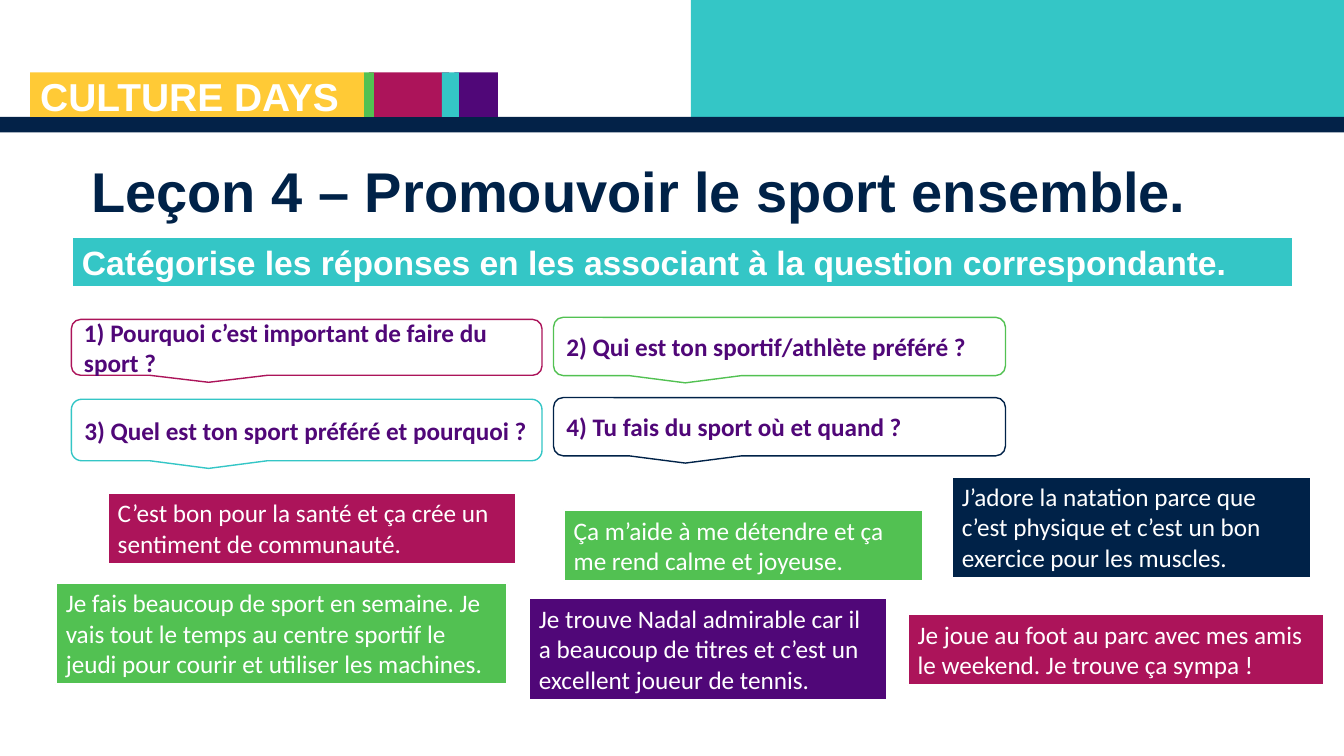
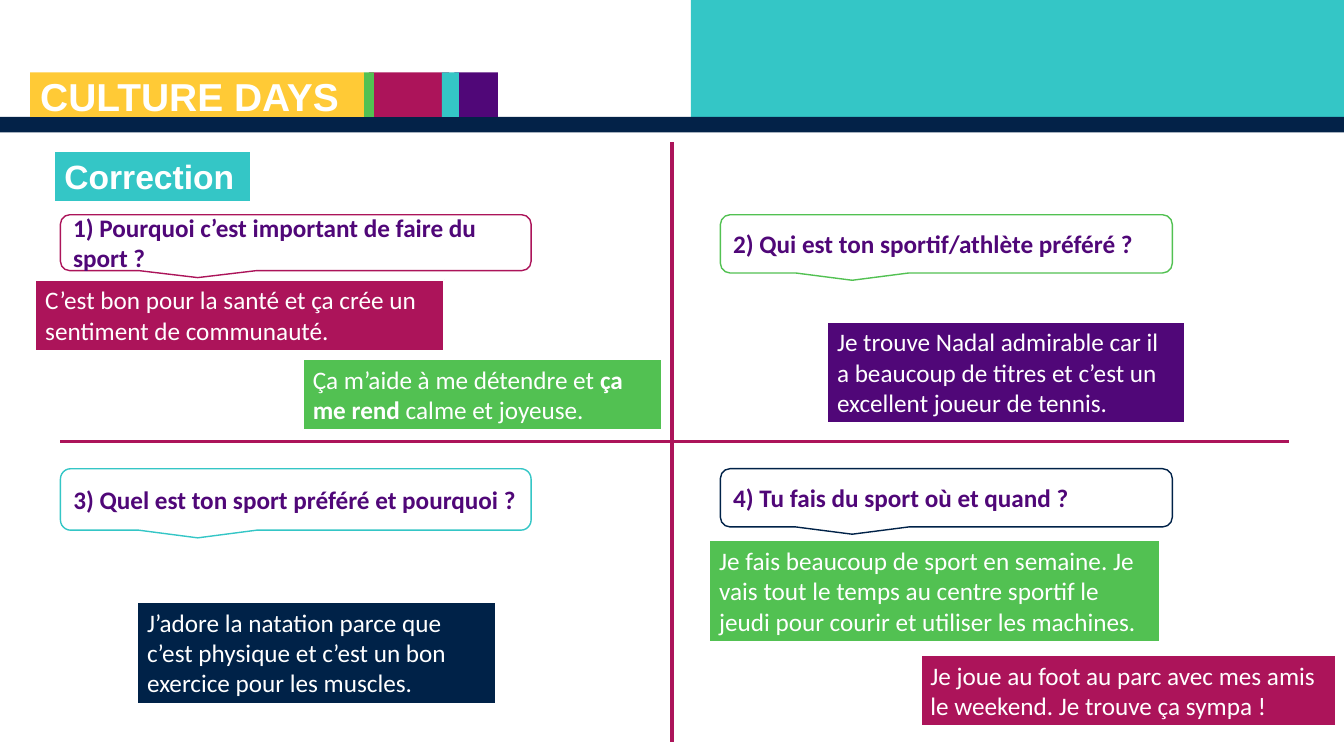
from pptx import Presentation
from pptx.dml.color import RGBColor
from pptx.enum.shapes import MSO_CONNECTOR as Wire, MSO_SHAPE as Form
from pptx.enum.text import MSO_ANCHOR as Anchor, MSO_AUTO_SIZE as Fit, PP_ALIGN as Align
from pptx.oxml import parse_xml
from pptx.oxml.ns import nsdecls
from pptx.util import Pt

WHITE, NAVY, BAND = "FFFFFF", "002248", "032248"
TEAL, PINK, GREEN = "34C6C6", "AC145A", "52C152"
PURPLE, YELLOW = "500778", "FFCA36"

BARS = [
    (493.6, 0, 466.4, 83.7, TEAL),
    (0, 83.6, 960, 11, BAND),
    (324.6, 51.8, 31.1, 31.8, PURPLE),
    (263.6, 51.8, 57.2, 31.8, PINK),
    (315.6, 51.8, 12.3, 31.8, TEAL),
    (260, 51.8, 7, 31.8, GREEN),
    (21.6, 51.8, 238.4, 31.8, YELLOW),
]
BRAND = "CULTURE DAYS"
TITLE = "Leçon 4 – Promouvoir le sport ensemble."
TASK = "Catégorise les réponses en les associant à la question correspondante."

ASKS = [
    ("1) Pourquoi c’est important de faire du sport ?", 336.2, 39.9, PINK),
    ("2) Qui est ton sportif/athlète préféré ?", 322.8, 41.6, GREEN),
    ("3) Quel est ton sport préféré et pourquoi ?", 336.2, 43.9, TEAL),
    ("4) Tu fais du sport où et quand ?", 322.8, 41.6, NAVY),
]
REPLIES = [
    (["C’est bon pour la santé et ça crée un sentiment de communauté."], 292, 50.9, PINK),
    (["J’adore la natation parce que c’est physique et c’est un bon exercice pour les muscles."],
     256.4, 72.7, NAVY),
    (["Je fais beaucoup de sport en semaine. Je vais tout le temps au centre sportif "
      "le jeudi pour courir et utiliser les machines."], 322.4, 72.7, GREEN),
    (["Je trouve Nadal admirable car il a beaucoup de titres et c’est un excellent "
      "joueur de tennis."], 255.6, 72.7, PURPLE),
    (["Je joue au foot au parc avec mes amis le weekend. Je trouve ça sympa !"],
     297.2, 50.9, PINK),
    (["Ça m’aide à me détendre et ", "ça me rend ", "calme et joyeuse."], 256.4, 50.9, GREEN),
]

SORT_ASKS = [(51, 228.2), (395.4, 226.7), (51, 285.2), (395.4, 284)]
SORT_REPLIES = [(77, 352), (680, 340.4), (39.9, 416.2), (377.9, 427.4), (648.3, 438.5), (402.7, 364.3)]
KEY_ASKS = [(x, y) for y in (153.4, 334.8) for x in (43.2, 514.6)]
KEY_REPLIES = [(25.2, 199.8), (98, 430), (506.6, 386), (590.8, 229.8), (657.5, 468), (216.3, 256.4)]
CROSS = [(480, 101.5, 480, 530), (43.2, 315.4, 921, 315.4)]


def tint(code):
    return RGBColor.from_string(code)


def block(page, box, fill, edge=None, weight=1.5, form=Form.RECTANGLE):
    shape = page.shapes.add_shape(form, *map(Pt, box))
    shape.shadow.inherit = False
    shape.fill.solid()
    shape.fill.fore_color.rgb = tint(fill)
    if edge:
        shape.line.color.rgb = tint(edge)
        shape.line.width = Pt(weight)
    else:
        shape.line.fill.background()
    return shape


def write(shape, parts, size, color, face="Calibri", bold=False, anchor=Anchor.TOP, stress=False):
    frame = shape.text_frame
    frame.word_wrap = True
    frame.vertical_anchor = anchor
    para = frame.paragraphs[0]
    para.alignment = Align.LEFT
    for i, part in enumerate(parts):
        run = para.add_run()
        run.text = part
        if stress and i % 2:
            run.font.bold = True
    font = para.font
    font.name, font.size, font.bold = face, Pt(size), bold
    font.color.rgb = tint(color)
    return frame


def head(page, text, box, size, color):
    shape = page.shapes.add_textbox(*map(Pt, box))
    return write(shape, [text], size, color, "Arial", True)


def label(page, text, box):
    shape = block(page, box, TEAL, WHITE)
    write(shape, [text], 24, WHITE, "Arial", True).auto_size = Fit.SHAPE_TO_FIT_TEXT


def start(deck):
    page = deck.slides.add_slide(deck.slide_layouts[6])
    for *box, fill in BARS:
        block(page, box, fill)
    frame = head(page, BRAND, (21.6, 54, 298.8, 34.6), 27.8, WHITE)
    frame.vertical_anchor = Anchor.BOTTOM
    frame.paragraphs[0].line_spacing = 0.8
    return page


def cards(page, asks, replies, stress=False):
    for (text, w, h, edge), spot in zip(ASKS, asks):
        shape = block(page, (*spot, w, h), WHITE, edge, 1, Form.ROUNDED_RECTANGULAR_CALLOUT)
        write(shape, [text], 18, PURPLE, bold=True, anchor=Anchor.MIDDLE)
    for (parts, w, h, fill), spot in zip(REPLIES, replies):
        shape = block(page, (*spot, w, h), fill, WHITE)
        frame = write(shape, parts, 18, WHITE, stress=stress)
        frame.auto_size = Fit.SHAPE_TO_FIT_TEXT


def rule(page, ends):
    line = page.shapes.add_connector(Wire.STRAIGHT, *map(Pt, ends))
    line.line.color.rgb = tint(PINK)
    line.line.width = Pt(2.25)
    line._element.spPr.append(parse_xml(f"<a:effectLst {nsdecls('a')}/>"))


def main():
    deck = Presentation()
    deck.slide_width, deck.slide_height = Pt(960), Pt(540)

    page = start(deck)
    label(page, TASK, (51.4, 169, 872.6, 36.3))
    head(page, TITLE, (58.2, 108, 887, 55.7), 40, NAVY)
    cards(page, SORT_ASKS, SORT_REPLIES)

    page = start(deck)
    cards(page, KEY_ASKS, KEY_REPLIES, stress=True)
    label(page, "Correction", (38.9, 108, 140.4, 36.3))
    for ends in CROSS:
        rule(page, ends)

    deck.save("out.pptx")


if __name__ == "__main__":
    main()
